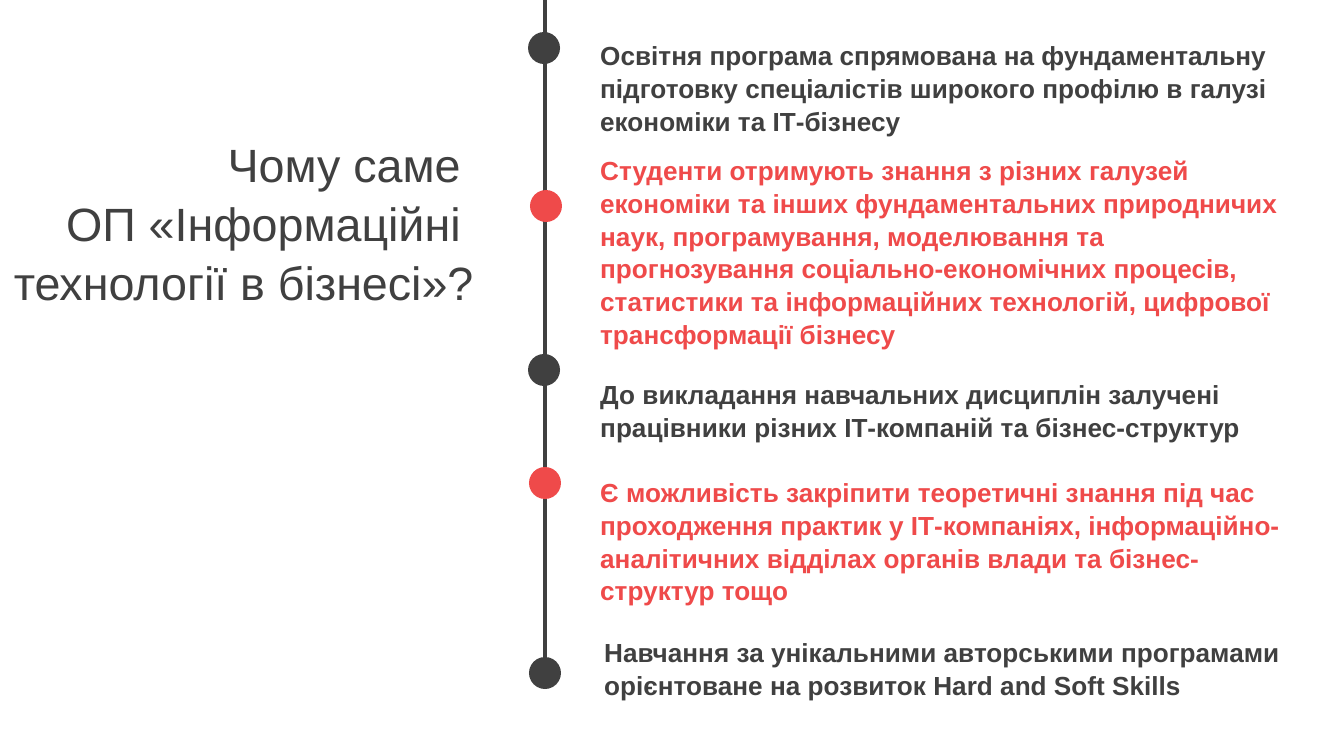
from lxml import etree
from pptx import Presentation
from pptx import util as u
from pptx.dml.color import RGBColor
from pptx.enum import shapes, text
from pptx.oxml.ns import qn

DARK = RGBColor(0x40, 0x40, 0x40)
RED = RGBColor(0xEF, 0x4A, 0x4A)
FONT = "Arial"
LINE_SPACING = 1.05

QUESTION = ["Чому саме ", "ОП «Інформаційні ", "технології в бізнесі»?"]

# reason, marker (left, top), text box (left, top, width, height)
REASONS = [
    ("Освітня програма спрямована на фундаментальну підготовку спеціалістів "
     "широкого профілю в галузі економіки та ІТ-бізнесу",
     (528, 32), (587, 31, 710, 109)),
    ("Студенти отримують знання з різних галузей економіки та інших "
     "фундаментальних природничих наук, програмування, моделювання та "
     "прогнозування соціально-економічних процесів, статистики та "
     "інформаційних технологій, цифрової трансформації бізнесу",
     (530, 190), (587, 146, 730, 203)),
    ("До викладання навчальних дисциплін залучені працівники різних "
     "ІТ-компаній та бізнес-структур",
     (528, 354), (587, 370, 704, 77)),
    ("Є можливість закріпити теоретичні знання під час проходження практик "
     "у ІТ-компаніях, інформаційно-аналітичних відділах органів влади та "
     "бізнес-структур тощо",
     (529, 467), (587, 468, 730, 140)),
    ("Навчання за унікальними авторськими програмами орієнтоване на розвиток "
     "Hard and Soft Skills",
     (529, 657), (591, 628, 714, 77)),
]
MARKER = 32
AXIS_X = 545


def px(*lengths):
    return [u.Emu(round(n * 914400 / 134.4)) for n in lengths]


def write(paragraph, words, size, color, bold=False):
    paragraph.line_spacing = LINE_SPACING
    run = paragraph.add_run()
    run.text = words
    run.font.name, run.font.size, run.font.bold = FONT, u.Pt(size), bold
    run.font.color.rgb = color


def add_question(slide):
    question = slide.shapes.title
    question.left, question.top, question.width, question.height = px(-122, 179, 609, 85)
    frame = question.text_frame
    frame.auto_size = text.MSO_AUTO_SIZE.NONE
    frame.word_wrap = True
    frame.vertical_anchor = text.MSO_ANCHOR.MIDDLE
    for i, words in enumerate(QUESTION):
        paragraph = frame.add_paragraph() if i else frame.paragraphs[0]
        paragraph.alignment = text.PP_ALIGN.RIGHT
        write(paragraph, words, 25, DARK)


def add_axis(slide):
    end_y = REASONS[-1][1][1] + MARKER // 2
    axis = slide.shapes.add_connector(
        shapes.MSO_CONNECTOR.STRAIGHT, *px(AXIS_X, 0, AXIS_X, end_y))
    axis.line.color.rgb = DARK
    axis.line.width = u.Pt(2)
    etree.SubElement(axis._element.spPr, qn("a:effectLst"))


def add_reason(slide, words, marker_at, box, color):
    marker = slide.shapes.add_shape(
        shapes.MSO_SHAPE.FLOWCHART_CONNECTOR, *px(*marker_at, MARKER, MARKER))
    marker.shadow.inherit = False
    marker.fill.solid()
    marker.fill.fore_color.rgb = color
    marker.line.fill.background()

    frame = slide.shapes.add_textbox(*px(*box)).text_frame
    frame.word_wrap = True
    frame.auto_size = text.MSO_AUTO_SIZE.SHAPE_TO_FIT_TEXT
    write(frame.paragraphs[0], words, 14, color, bold=True)


def main():
    deck = Presentation()
    deck.slide_width, deck.slide_height = px(1344, 756)
    slide = deck.slides.add_slide(deck.slide_layouts.get_by_name("Title Only"))
    add_question(slide)
    add_axis(slide)
    for i, (words, marker_at, box) in enumerate(REASONS):
        add_reason(slide, words, marker_at, box, RED if i % 2 else DARK)
    deck.save("out.pptx")


if __name__ == "__main__":
    main()
